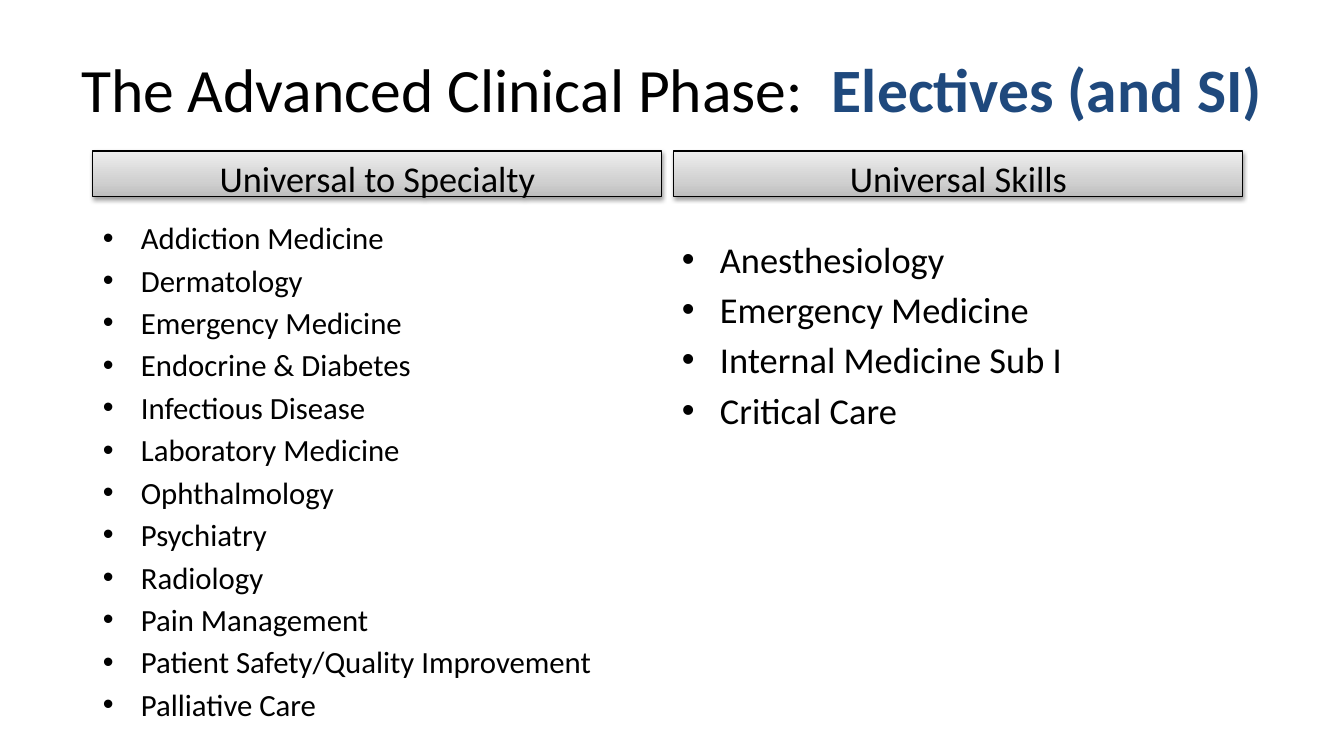
"""Build the slide listing electives of the advanced clinical phase."""
import lxml.etree
import pptx
import pptx.dml.color
import pptx.enum.shapes
import pptx.enum.text
import pptx.oxml.ns
import pptx.util

PX = 914400 / 100.8
COLORS = {"text": "000000", "accent": "1F497D", "line": "000000", "shadow": "000000"}
HEADER_STOPS = {0: "BDBDBD", 35000: "D1D1D1", 100000: "EEEEEE"}
COLUMNS = [
    {
        "header": "Universal to Specialty",
        "header_left": 93,
        "list_box": (93, 214, 569, 486),
        "size": 22,
        "space": 3.9,
        "items": [
            "Addiction Medicine", "Dermatology", "Emergency Medicine",
            "Endocrine & Diabetes", "Infectious Disease", "Laboratory Medicine",
            "Ophthalmology", "Psychiatry", "Radiology", "Pain Management",
            "Patient Safety/Quality Improvement", "Palliative Care",
        ],
    },
    {
        "header": "Universal Skills",
        "header_left": 674,
        "list_box": (672, 232, 572, 451),
        "size": 26,
        "space": 4.7,
        "items": [
            "Anesthesiology", "Emergency Medicine",
            "Internal Medicine Sub I", "Critical Care",
        ],
    },
]


def px(*lengths):
    return [pptx.util.Emu(round(length * PX)) for length in lengths]


def add_run(paragraph, text, color="text", **formats):
    run = paragraph.add_run()
    run.text = text
    for name, value in {"name": "Calibri", **formats}.items():
        setattr(run.font, name, value)
    run.font.color.rgb = pptx.dml.color.RGBColor.from_string(COLORS[color])


presentation = pptx.Presentation()
presentation.slide_width, presentation.slide_height = px(1344, 756)
slide = presentation.slides.add_slide(presentation.slide_layouts[6])
qn = pptx.oxml.ns.qn

title_frame = slide.shapes.add_textbox(*px(67, 25, 1210, 126)).text_frame
title_frame.word_wrap = True
title_frame.vertical_anchor = pptx.enum.text.MSO_ANCHOR.MIDDLE
title = title_frame.paragraphs[0]
title.alignment = pptx.enum.text.PP_ALIGN.CENTER
title_size = pptx.util.Pt(44)
add_run(title, "The Advanced Clinical Phase:  ", size=title_size)
add_run(title, "Electives (and SI)", "accent", size=title_size, bold=True)

for column in COLUMNS:
    header = slide.shapes.add_shape(
        pptx.enum.shapes.MSO_SHAPE.RECTANGLE, *px(column["header_left"], 151, 569, 46))
    header.line.color.rgb = pptx.dml.color.RGBColor.from_string(COLORS["line"])
    header.line.width = pptx.util.Pt(0.75)
    header.fill.gradient()
    header.fill.gradient_angle = 90
    stop_list = header.fill._fill._gradFill.find(qn("a:gsLst"))
    for stop in list(stop_list):
        stop_list.remove(stop)
    for position, color in HEADER_STOPS.items():
        stop = lxml.etree.SubElement(stop_list, qn("a:gs"), pos=str(position))
        lxml.etree.SubElement(stop, qn("a:srgbClr"), val=color)

    header.shadow.inherit = False
    effects = header._element.spPr.find(qn("a:effectLst"))
    shadow = lxml.etree.SubElement(
        effects, qn("a:outerShdw"), blurRad=str(pptx.util.Pt(3.1)),
        dist=str(pptx.util.Pt(1.6)), dir="5400000", rotWithShape="0")
    shadow_color = lxml.etree.SubElement(shadow, qn("a:srgbClr"), val=COLORS["shadow"])
    lxml.etree.SubElement(shadow_color, qn("a:alpha"), val="38000")

    header.text_frame.word_wrap = True
    header.text_frame.vertical_anchor = pptx.enum.text.MSO_ANCHOR.TOP
    heading = header.text_frame.paragraphs[0]
    heading.alignment = pptx.enum.text.PP_ALIGN.CENTER
    add_run(heading, column["header"], size=pptx.util.Pt(25.9))

    list_frame = slide.shapes.add_textbox(*px(*column["list_box"])).text_frame
    list_frame.word_wrap = True
    for index, item in enumerate(column["items"]):
        paragraph = list_frame.add_paragraph() if index else list_frame.paragraphs[0]
        properties = paragraph._p.get_or_add_pPr()
        indent = px(38)[0]
        properties.set("marL", str(indent))
        properties.set("indent", str(-indent))
        lxml.etree.SubElement(properties, qn("a:buFont"), typeface="Arial")
        lxml.etree.SubElement(properties, qn("a:buChar"), char="•")
        if index:
            paragraph.space_before = pptx.util.Pt(column["space"])
        add_run(paragraph, item, size=pptx.util.Pt(column["size"]))

presentation.save("out.pptx")
